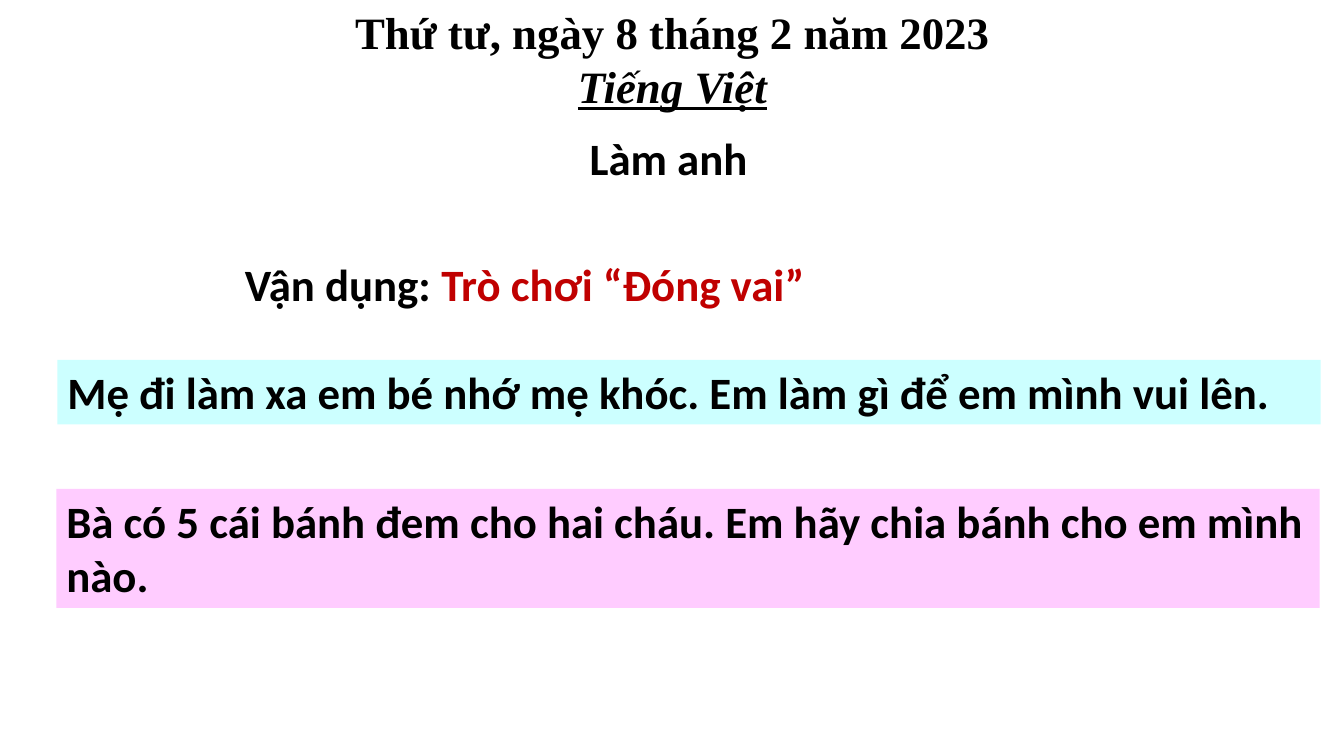
from pptx import Presentation
from pptx import util as u
from pptx.dml.color import RGBColor
from pptx.enum import shapes, text

BLACK = RGBColor(0x00, 0x00, 0x00)
RED = RGBColor(0xC0, 0x00, 0x00)
CYAN = RGBColor(0xCC, 0xFF, 0xFF)
PINK = RGBColor(0xFF, 0xCC, 0xFF)


class LessonSlide:
    size = u.Pt(32)

    def __init__(self, prs):
        self.s = prs.slides.add_slide(prs.slide_layouts[6])

    def set_text(self, sp, lines, font="Calibri", align=text.PP_ALIGN.LEFT):
        """Fill a shape with lines, each a list of (words, colour) runs."""
        tf = sp.text_frame
        tf.word_wrap = True
        tf.auto_size = text.MSO_AUTO_SIZE.SHAPE_TO_FIT_TEXT
        tf.vertical_anchor = text.MSO_ANCHOR.TOP
        for i, runs in enumerate(lines):
            p = tf.add_paragraph() if i else tf.paragraphs[0]
            p.alignment = align
            p.font.name, p.font.size, p.font.bold = font, self.size, True
            for words, color in runs:
                r = p.add_run()
                r.text = words
                r.font.color.rgb = color
        return tf

    def label(self, box, lines, **style):
        sp = self.s.shapes.add_textbox(*map(u.Inches, box))
        return self.set_text(sp, lines, **style)

    def band(self, box, words, fill):
        sp = self.s.shapes.add_shape(
            shapes.MSO_SHAPE.RECTANGLE, *map(u.Inches, box))
        sp.shadow.inherit = False
        sp.fill.solid()
        sp.fill.fore_color.rgb = fill
        sp.line.fill.background()
        return self.set_text(sp, [[(words, BLACK)]])


def main():
    prs = Presentation()
    prs.slide_width, prs.slide_height = u.Inches(13.33), u.Inches(7.5)
    slide = LessonSlide(prs)

    heading = slide.label(
        (1.67, 0, 10, 1.18),
        [[("Thứ tư, ngày 8 tháng 2 năm 2023", BLACK)], [("Tiếng Việt", BLACK)]],
        font="Times New Roman", align=text.PP_ALIGN.CENTER)
    subject = heading.paragraphs[1].font
    subject.italic = subject.underline = True

    slide.label((5.75, 1.25, 2.17, 0.64), [[("Làm anh", BLACK)]])
    slide.label((2.33, 2.5, 6.67, 0.64),
                [[("Vận dụng: ", BLACK), ("Trò chơi “Đóng vai”", RED)]])

    slide.band((0.57, 3.57, 12.53, 0.64),
               "Mẹ đi làm xa em bé nhớ mẹ khóc. Em làm gì để em mình vui lên.",
               CYAN)
    slide.band((0.56, 4.85, 12.53, 1.18),
               "Bà có 5 cái bánh đem cho hai cháu. "
               "Em hãy chia bánh cho em mình nào.", PINK)

    prs.save("out.pptx")


if __name__ == "__main__":
    main()
